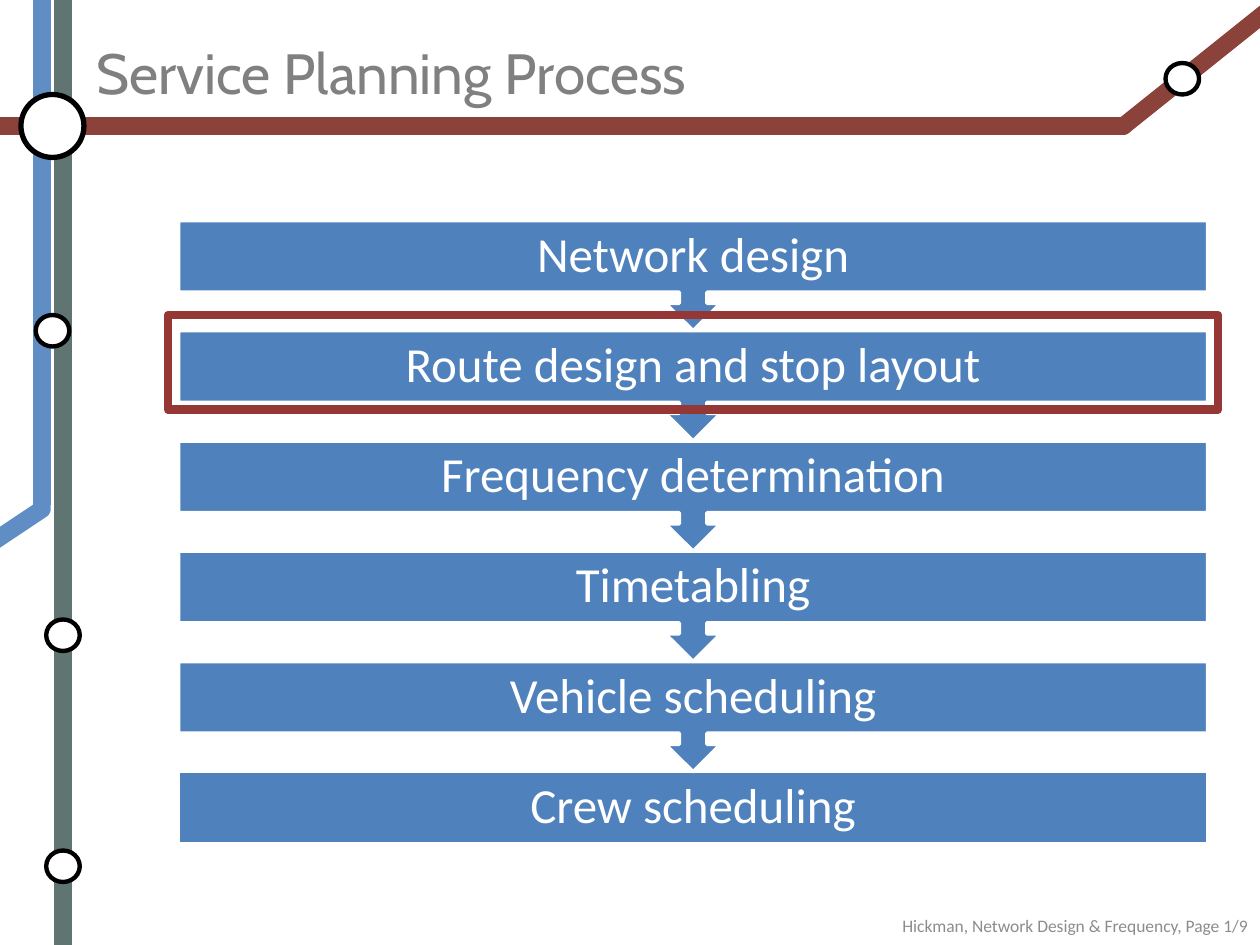
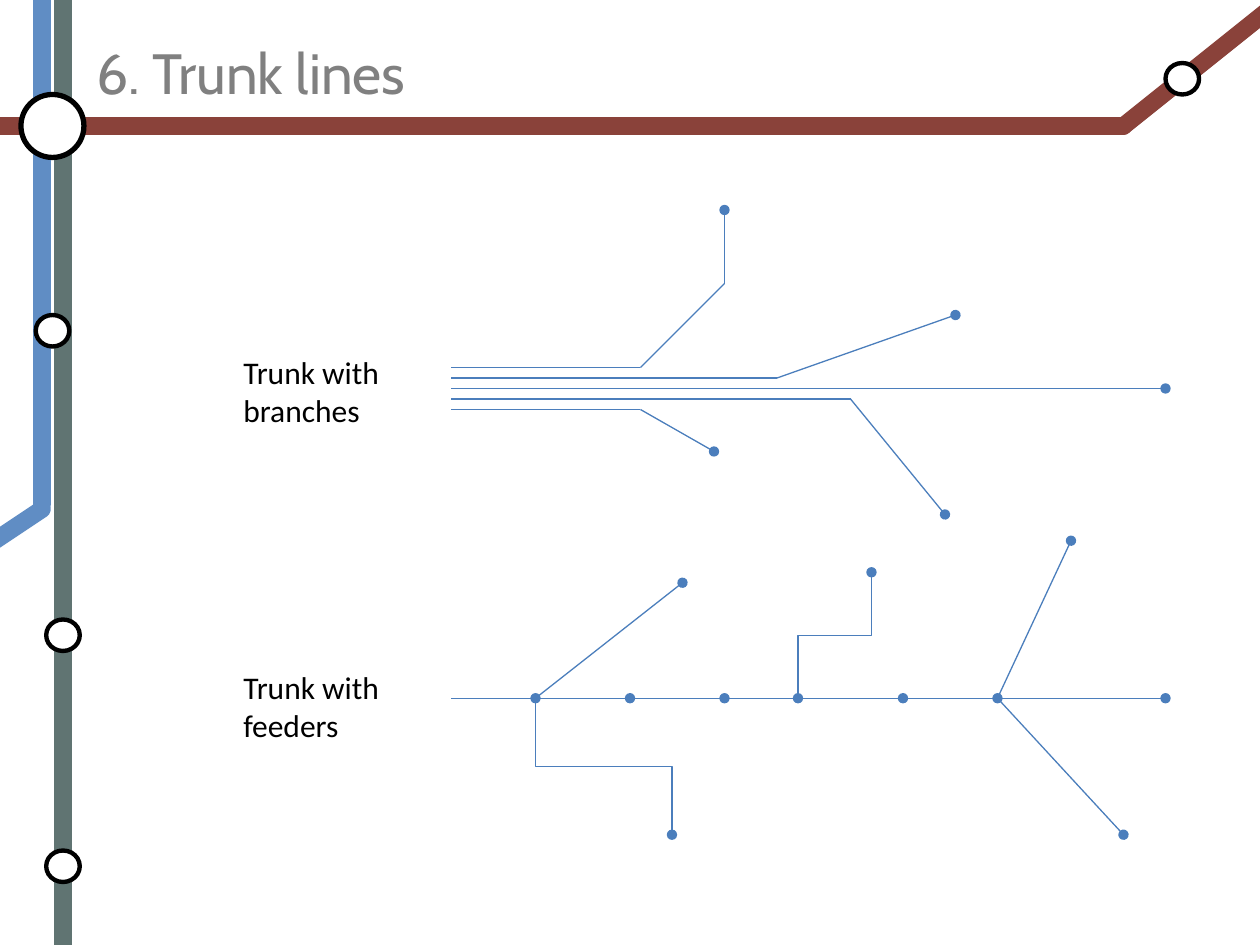
from lxml.etree import SubElement
from pptx import Presentation
from pptx.dml.color import RGBColor
from pptx.enum.shapes import MSO_CONNECTOR, MSO_SHAPE
from pptx.enum.text import MSO_ANCHOR, PP_ALIGN
from pptx.oxml.ns import qn
from pptx.util import Inches, Pt

# All lengths are grid units: twelve to the inch.
WIDTH, HEIGHT = 120, 90
GREEN, BLUE, RED = "607472", "608DC4", "8A423A"
STEP_BLUE, ROUTE_BLUE, FRAME_RED = "4F81BD", "4B7EBC", "953735"
WHITE, BLACK, TITLE_GREY, FOOTER_GREY = "FFFFFF", "000000", "808080", "8C8C8C"

# Colour and end points of each background transit line
TRANSIT_LINES = [
    (GREEN, (6, HEIGHT), (6, 0)),
    (BLUE, (4, 48), (4, 0)),
    (BLUE, (4, 48.5), (-2, 52.5)),
    (RED, (0, 12), (107, 12)),
    (RED, (122, 0), (107, 12)),
]
STATIONS = [(4.4, 59), (4.4, 81), (3.4, 30), (111, 6)]

STEPS = ["Network design", "Route design and stop layout", "Frequency determination",
         "Timetabling", "Vehicle scheduling", "Crew scheduling"]
STEP_LEFT, STEP_TOP, STEP_WIDTH = 17, 21, 98
STEP_PITCH, STEP_HEIGHT = 10.5, 6.82

TRUNK_START, TRUNK_END = 43, 111
BRANCHES = [
    [(61, 35), (69, 27), (69, 20)],
    [(74, 36), (91, 30)],
    [(TRUNK_END, 37)],
    [(81, 38), (90, 49)],
    [(61, 39), (68, 43)],
]
FEEDER_Y = 66.5
FEEDER_STOPS = [51, 60, 69, 76, 86, 95, TRUNK_END]
STRAIGHT_FEEDERS = [(51, 65, 55.5), (95, 107, 79.5), (95, 102, 51.5)]
ELBOW_FEEDERS = [(51, 64, 79.5), (76, 83, 54.5)]


def grid(*units):
    return [Inches(u / 12) for u in units]


def rgb(color):
    return RGBColor.from_string(color)


def style_line(line, color, width):
    line.color.rgb = rgb(color)
    line.width = Pt(width)


def add_shape(slide, kind, box, fill, line, width):
    sp = slide.shapes.add_shape(kind, *grid(*box))
    sp.shadow.inherit = False
    if fill:
        sp.fill.solid()
        sp.fill.fore_color.rgb = rgb(fill)
    else:
        sp.fill.background()
    style_line(sp.line, line, width)
    return sp


def add_line(slide, start, end, color=ROUTE_BLUE, width=0.75, dot=False,
             kind=MSO_CONNECTOR.STRAIGHT):
    """Draw a connector; dot puts a stop at its end."""
    cxn = slide.shapes.add_connector(kind, *grid(*start, *end))
    style_line(cxn.line, color, width)
    SubElement(cxn._element.spPr, qn("a:effectLst"))
    if dot:
        SubElement(cxn.line._get_or_add_ln(), qn("a:tailEnd"), type="oval")
    return cxn


def add_elbow(slide, start, end):
    """Draw an elbow that leaves start vertically, as a connector turned by 270 degrees."""
    (x1, y1), (x2, y2) = start, end
    mid_x, mid_y = (x1 + x2) / 2, (y1 + y2) / 2
    half_run, half_rise = (x2 - x1) / 2, (y2 - y1) / 2
    cxn = add_line(slide, (mid_x + half_rise, mid_y - half_run),
                   (mid_x - half_rise, mid_y + half_run),
                   dot=True, kind=MSO_CONNECTOR.ELBOW)
    cxn._element.spPr.find(qn("a:xfrm")).set("rot", str(270 * 60000))


def add_text(slide, text, box, size, color, font="Calibri", align=PP_ALIGN.LEFT,
             anchor=MSO_ANCHOR.TOP):
    tf = slide.shapes.add_textbox(*grid(*box)).text_frame
    tf.word_wrap = True
    tf.vertical_anchor = anchor
    p = tf.paragraphs[0]
    p.text = text
    p.alignment = align
    r = p.runs[0]
    r.font.name, r.font.size = font, Pt(size)
    r.font.color.rgb = rgb(color)
    return p


def add_transit_slide(prs, title):
    """Add a slide with the transit map background and its title."""
    slide = prs.slides.add_slide(prs.slide_layouts[6])
    for color, start, end in TRANSIT_LINES:
        cxn = add_line(slide, start, end, color, 10)
        cxn.line._get_or_add_ln().set("cap", "rnd")
    add_shape(slide, MSO_SHAPE.OVAL, (2, 9, 6, 6), WHITE, BLACK, 3)
    for x, y in STATIONS:
        add_shape(slide, MSO_SHAPE.OVAL, (x, y, 3.2, 3), WHITE, BLACK, 2.5)
    add_text(slide, title, (8, 3.6, 99, 6.4), 32.4, TITLE_GREY, "Cabin",
             anchor=MSO_ANCHOR.MIDDLE)
    return slide


def add_step(slide, index):
    top = STEP_TOP + index * STEP_PITCH
    box = (STEP_LEFT, top, STEP_WIDTH, STEP_HEIGHT)
    if index == len(STEPS) - 1:
        add_shape(slide, MSO_SHAPE.RECTANGLE, box, STEP_BLUE, WHITE, 2)
    else:
        sp = add_shape(slide, MSO_SHAPE.UP_ARROW_CALLOUT,
                       (STEP_LEFT, top, STEP_WIDTH, STEP_PITCH), STEP_BLUE, WHITE, 2)
        sp.rotation = 180
    p = add_text(slide, STEPS[index], box, 28, WHITE, align=PP_ALIGN.CENTER,
                 anchor=MSO_ANCHOR.MIDDLE)
    p.line_spacing = 0.9


def build_process_slide(prs):
    slide = add_transit_slide(prs, "Service Planning Process")
    for index in reversed(range(len(STEPS))):
        add_step(slide, index)
    add_text(slide, "Hickman, Network Design & Frequency, Page 1/9",
             (69, 86.6, 51, 3.7), 10, FOOTER_GREY, align=PP_ALIGN.RIGHT)
    add_shape(slide, MSO_SHAPE.RECTANGLE, (16, 30, 100, 9), None, FRAME_RED, 5)


def add_branch(slide, points):
    """Run from the trunk start through the points, with a stop at the last."""
    stops = [(TRUNK_START, points[0][1]), *points]
    for start, end in zip(stops, points):
        add_line(slide, start, end, dot=end == points[-1])


def build_trunk_slide(prs):
    slide = add_transit_slide(prs, "6. Trunk lines")
    for label, top in [("Trunk with branches", 33), ("Trunk with feeders", 63)]:
        add_text(slide, label, (22, top, 18, 8.5), 18, BLACK)
    for points in BRANCHES:
        add_branch(slide, points)
    for start, end in zip([TRUNK_START, *FEEDER_STOPS], FEEDER_STOPS):
        add_line(slide, (start, FEEDER_Y), (end, FEEDER_Y), dot=True)
    for stop, x, y in STRAIGHT_FEEDERS:
        add_line(slide, (stop, FEEDER_Y), (x, y), dot=True)
    for stop, x, y in ELBOW_FEEDERS:
        add_elbow(slide, (stop, FEEDER_Y), (x, y))


def main():
    prs = Presentation()
    prs.slide_width, prs.slide_height = grid(WIDTH, HEIGHT)
    build_process_slide(prs)
    build_trunk_slide(prs)
    prs.save("out.pptx")


if __name__ == "__main__":
    main()
